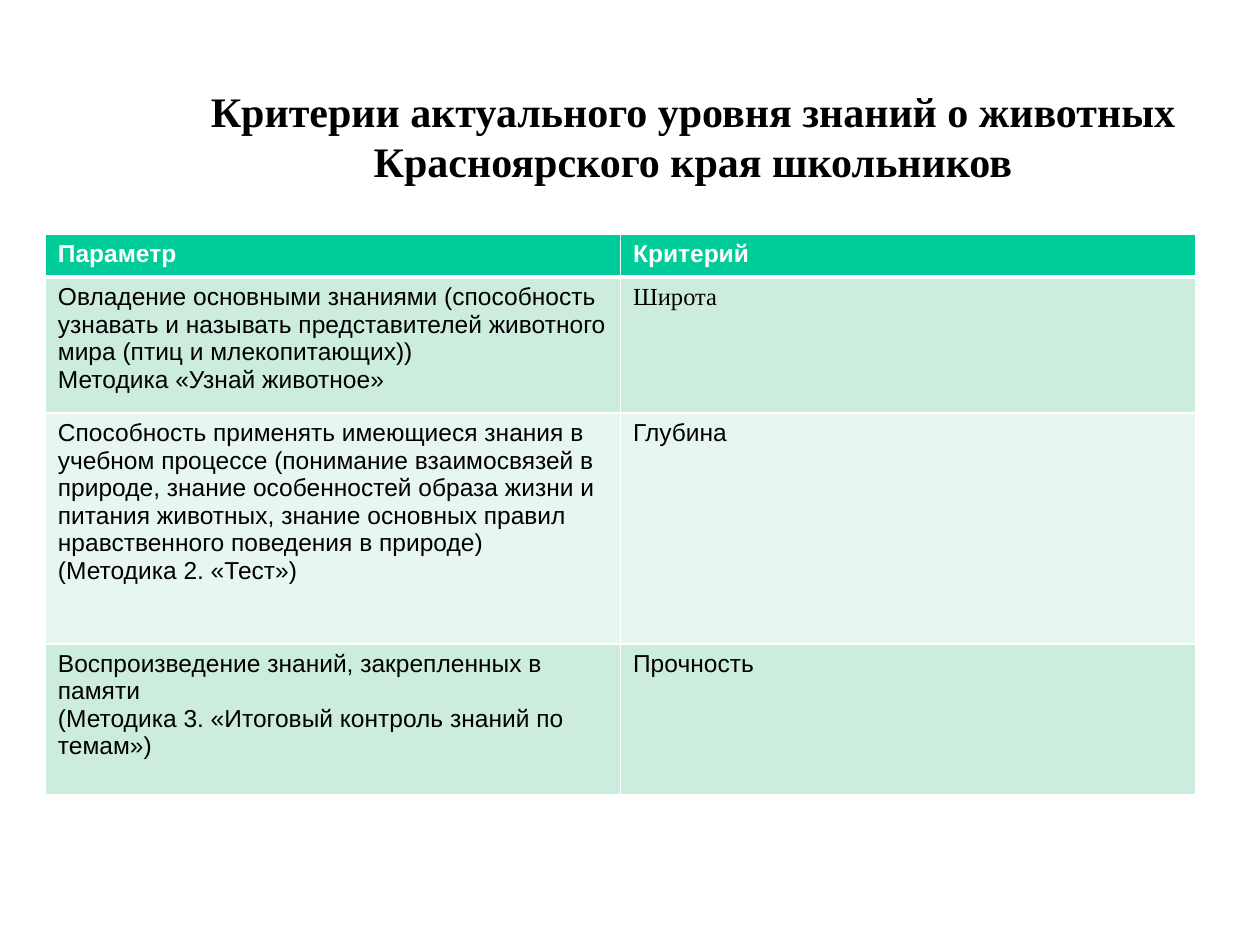
from dataclasses import dataclass

from lxml import etree
from pptx import Presentation
from pptx.dml.color import RGBColor
from pptx.enum.text import MSO_ANCHOR, PP_ALIGN
from pptx.oxml.ns import qn
from pptx.util import Inches, Pt

CENTER = PP_ALIGN.CENTER
MIDDLE = MSO_ANCHOR.MIDDLE


@dataclass(frozen=True)
class Theme:
    black: str = "000000"
    white: str = "FFFFFF"
    header: str = "00CC99"
    bands: tuple = ("CCECDE", "E7F6EF")
    serif: str = "Times New Roman"
    sans: str = "Arial"
    title_size: int = 24
    table_size: int = 14
    border: int = 1
    header_border: int = 3


THEME = Theme()


def add_span(para, text, font, size, color, bold=False):
    span = para.add_run()
    span.text = text
    span.font.name = font
    span.font.size = Pt(size)
    span.font.bold = bold
    span.font.color.rgb = RGBColor.from_string(color)


def add_borders(cell, top, bottom):
    """Draw white cell borders; call before the fill is set."""
    properties = cell._tc.get_or_add_tcPr()
    widths = {"a:lnL": THEME.border, "a:lnR": THEME.border, "a:lnT": top, "a:lnB": bottom}
    for tag, width in widths.items():
        line = etree.SubElement(properties, qn(tag), w=str(Pt(width)))
        fill = etree.SubElement(line, qn("a:solidFill"))
        etree.SubElement(fill, qn("a:srgbClr"), val=THEME.white)


deck = Presentation()
deck.slide_width = Inches(10)
deck.slide_height = Inches(7.5)
page = deck.slides.add_slide(deck.slide_layouts[6])

# Title
title = page.shapes.add_textbox(Inches(1), Inches(0.29), Inches(9), Inches(1.57))
title.text_frame.word_wrap = True
title.text_frame.vertical_anchor = MIDDLE
para = title.text_frame.paragraphs[0]
para.alignment = CENTER
add_span(para, "Критерии актуального уровня знаний о животных Красноярского края школьников",
         THEME.serif, THEME.title_size, THEME.black, bold=True)

# Criteria table: row height, parameter paragraphs, criterion, criterion font
rows = [
    (0.34, ["Параметр"], "Критерий", THEME.sans),
    (1.08, ["Овладение основными знаниями (способность узнавать и называть "
            "представителей животного мира (птиц и млекопитающих))",
            "Методика «Узнай животное»"], "Широта", THEME.serif),
    (1.83, ["Способность применять имеющиеся знания в учебном процессе (понимание "
            "взаимосвязей в природе, знание особенностей образа жизни и питания животных, "
            "знание основных правил нравственного поведения в природе)",
            "(Методика 2. «Тест»)"], "Глубина", THEME.sans),
    (1.2, ["Воспроизведение знаний, закрепленных в памяти",
           "(Методика 3. «Итоговый контроль знаний по темам»)"], "Прочность", THEME.sans),
]
table_height = sum(row[0] for row in rows)
table = page.shapes.add_table(len(rows), 2, Inches(0.36), Inches(1.86),
                              Inches(9.13), Inches(table_height)).table
table.horz_banding = False

for row_index, (height, parameter, criterion, criterion_font) in enumerate(rows):
    table.rows[row_index].height = Inches(height)
    is_header = row_index == 0
    fill_color = THEME.header if is_header else THEME.bands[(row_index - 1) % 2]
    text_color = THEME.white if is_header else THEME.black
    top = THEME.header_border if row_index == 1 else THEME.border
    bottom = THEME.header_border if is_header else THEME.border
    columns = [(parameter, THEME.sans), ([criterion], criterion_font)]
    for column_index, (texts, font) in enumerate(columns):
        cell = table.cell(row_index, column_index)
        add_borders(cell, top, bottom)
        cell.fill.solid()
        cell.fill.fore_color.rgb = RGBColor.from_string(fill_color)
        for text_index, text in enumerate(texts):
            frame = cell.text_frame
            para = frame.add_paragraph() if text_index else frame.paragraphs[0]
            add_span(para, text, font, THEME.table_size, text_color, bold=is_header)

deck.save("out.pptx")
